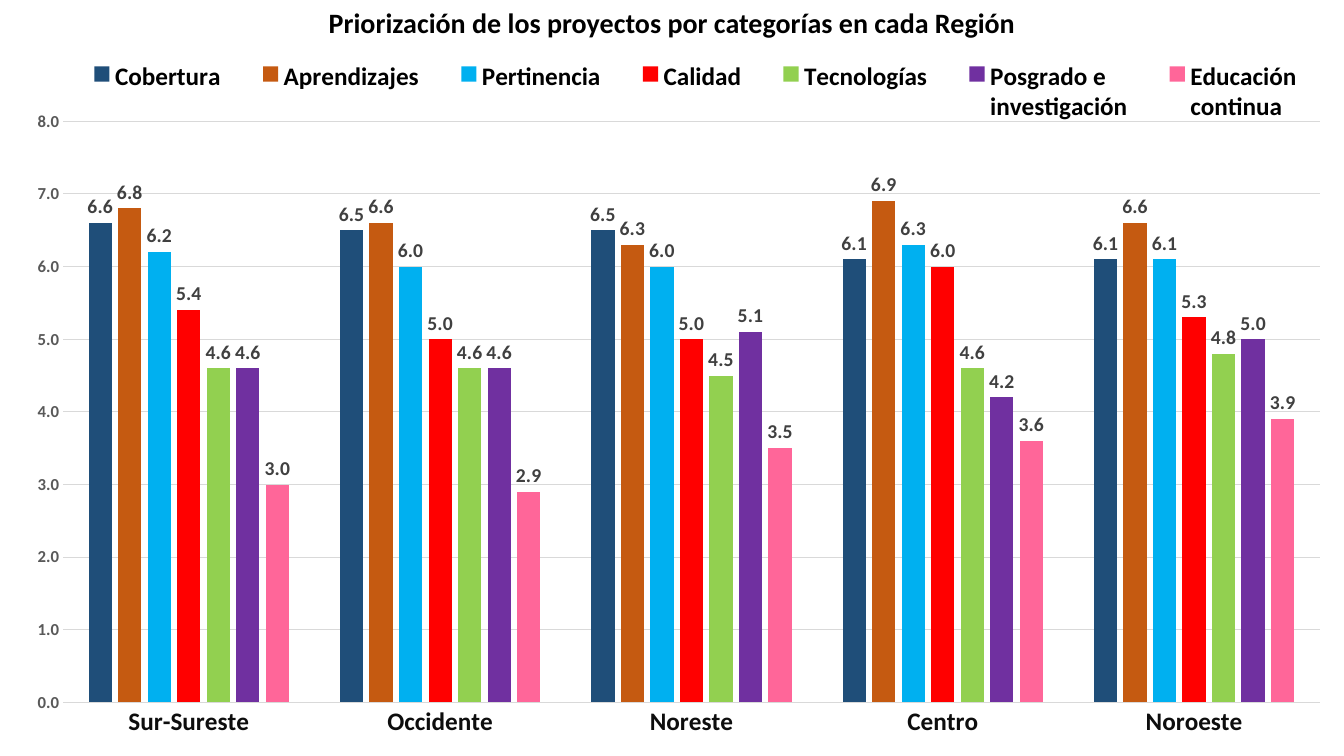
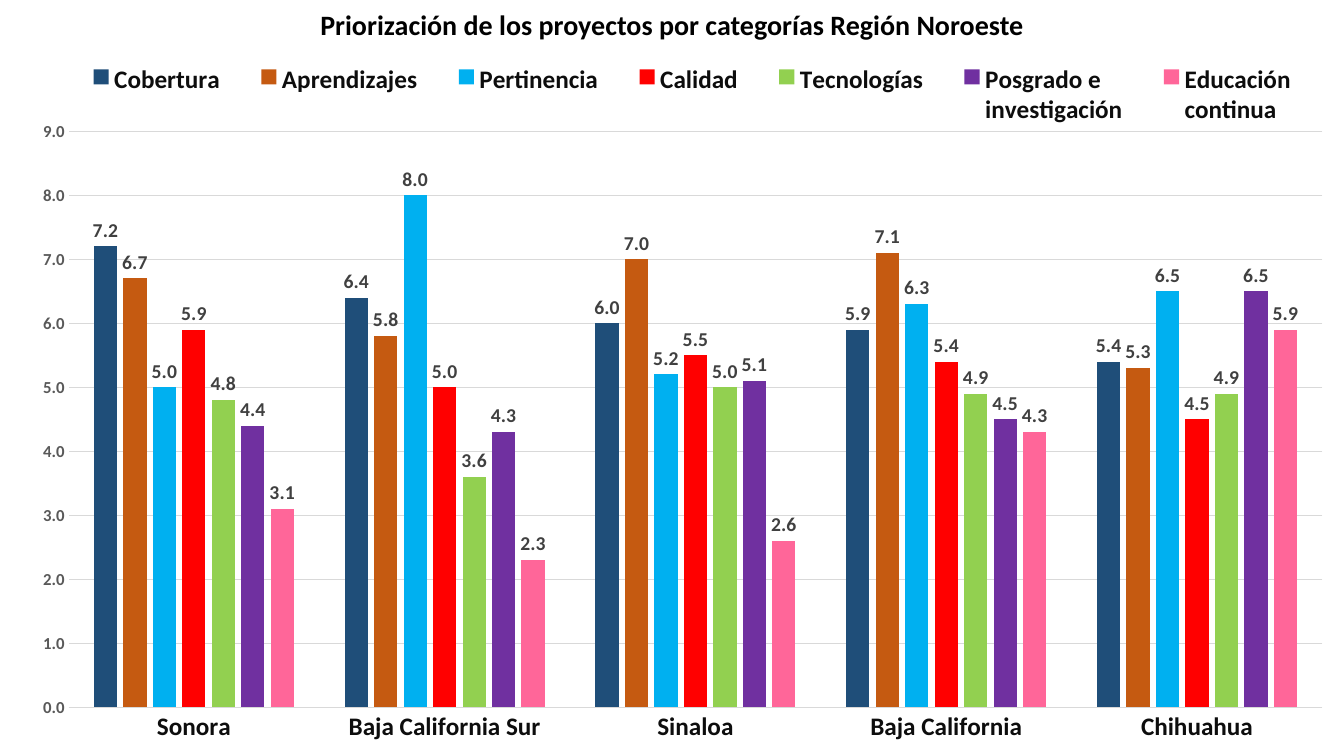
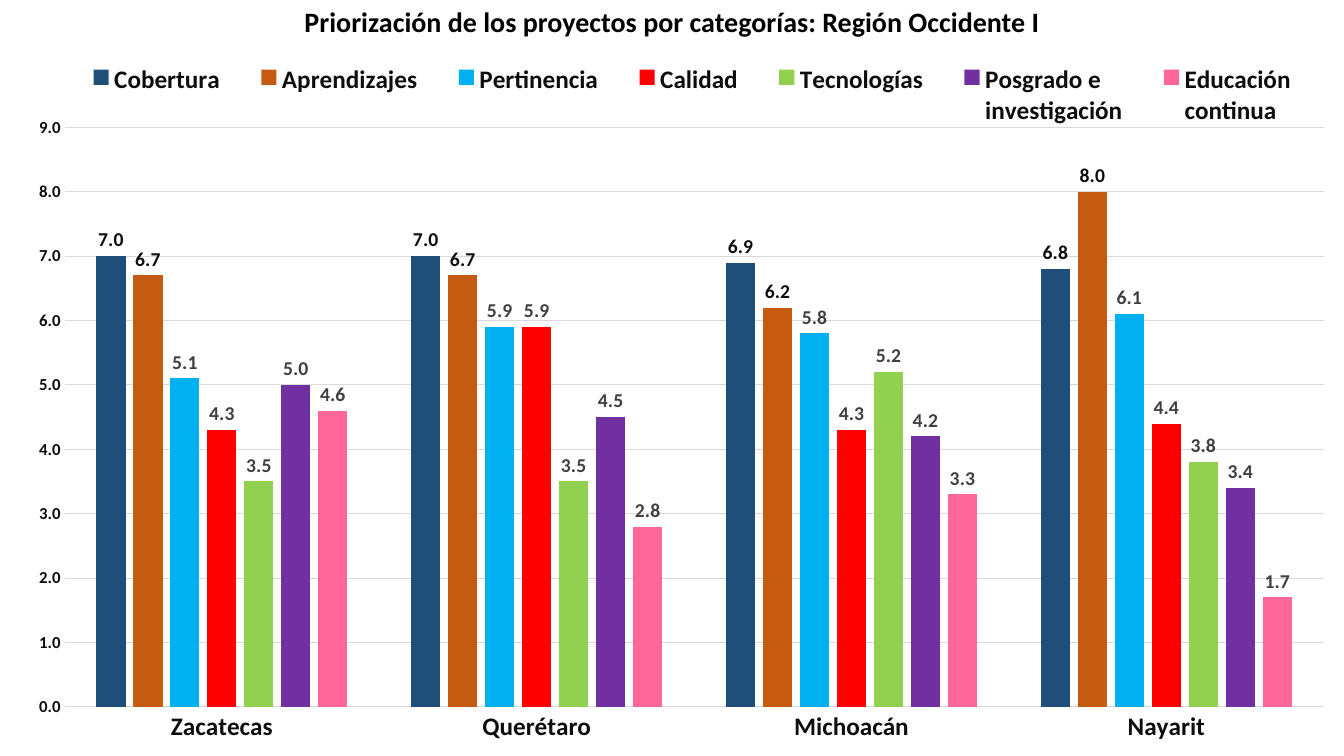
import pptx
import pptx.chart.data
import pptx.dml.color
import pptx.enum.chart
import pptx.enum.text
import pptx.oxml
import pptx.oxml.ns
import pptx.util

Pt = pptx.util.Pt
WIDTH, HEIGHT = 960, 540
BLACK, INK, DARK, GREY, RULE = "000000", "0D0D0D", "404040", "595959", "D9D9D9"
SERIES = {
    "Cobertura": "1F4E79",
    "Aprendizajes": "C55A11",
    "Pertinencia": "00B0F0",
    "Calidad": "FF0000",
    "Tecnologías": "92D050",
    "Posgrado e\ninvestigación": "7030A0",
    "Educación\ncontinua": "FF6699",
}

# Values: one row per category, one number per series
PAGES = [
    {
        "title": "Priorización de los proyectos por categorías en cada Región",
        "title_top": 0.5, "chart_top": 38, "maximum": 8,
        "plot": (0.047, 0.097, 0.935, 0.827),
        "legend": (0.045, 0.005, 0.945, 0.1),
        "legend_color": BLACK, "scale_color": GREY, "label_colors": {},
        "rows": {
            "Sur-Sureste": (6.6, 6.8, 6.2, 5.4, 4.6, 4.6, 3.0),
            "Occidente": (6.5, 6.6, 6.0, 5.0, 4.6, 4.6, 2.9),
            "Noreste": (6.5, 6.3, 6.0, 5.0, 4.5, 5.1, 3.5),
            "Centro": (6.1, 6.9, 6.3, 6.0, 4.6, 4.2, 3.6),
            "Noroeste": (6.1, 6.6, 6.1, 5.3, 4.8, 5.0, 3.9),
        },
    },
    {
        "title": "Priorización de los proyectos por categorías Región Noroeste",
        "title_top": 2, "chart_top": 37.5, "maximum": 9,
        "plot": (0.051, 0.112, 0.933, 0.819),
        "legend": (0.045, 0.01, 0.94, 0.1),
        "legend_color": INK, "scale_color": GREY, "label_colors": {},
        "rows": {
            "Sonora": (7.2, 6.7, 5.0, 5.9, 4.8, 4.4, 3.1),
            "Baja California Sur": (6.4, 5.8, 8.0, 5.0, 3.6, 4.3, 2.3),
            "Sinaloa": (6.0, 7.0, 5.2, 5.5, 5.0, 5.1, 2.6),
            "Baja California": (5.9, 7.1, 6.3, 5.4, 4.9, 4.5, 4.3),
            "Chihuahua": (5.4, 5.3, 6.5, 4.5, 4.9, 6.5, 5.9),
        },
    },
    {
        "title": "Priorización de los proyectos por categorías: Región Occidente I",
        "title_top": 0, "chart_top": 40.5, "maximum": 9,
        "plot": (0.048, 0.101, 0.937, 0.829),
        "legend": (0.045, 0.005, 0.94, 0.1),
        "legend_color": INK, "scale_color": INK,
        "label_colors": {"Cobertura": INK, "Aprendizajes": INK},
        "rows": {
            "Zacatecas": (7.0, 6.7, 5.1, 4.3, 3.5, 5.0, 4.6),
            "Querétaro": (7.0, 6.7, 5.9, 5.9, 3.5, 4.5, 2.8),
            "Michoacán": (6.9, 6.2, 5.8, 4.3, 5.2, 4.2, 3.3),
            "Nayarit": (6.8, 8.0, 6.1, 4.4, 3.8, 3.4, 1.7),
        },
    },
]


def rgb(color):
    return pptx.dml.color.RGBColor.from_string(color)


def assign(target, values):
    for name, value in values.items():
        setattr(target, name, value)


class Deck:
    """Shared style and the current page."""

    face = "Calibri"

    def __init__(self):
        self.deck = pptx.Presentation()
        assign(self.deck, {"slide_width": Pt(WIDTH), "slide_height": Pt(HEIGHT)})
        self.page = None

    def add_page(self):
        self.page = self.deck.slides.add_slide(self.deck.slide_layouts[6])

    def style(self, font, size, color, bold=True):
        assign(font, {"name": self.face, "size": Pt(size), "bold": bold})
        font.color.rgb = rgb(color)

    def rule(self, line):
        line.color.rgb = rgb(RULE)
        line.width = Pt(0.75)

    def title(self, text, top):
        box = self.page.shapes.add_textbox(0, Pt(top), Pt(WIDTH), Pt(31.5))
        assign(box.text_frame, {
            "word_wrap": True,
            "auto_size": pptx.enum.text.MSO_AUTO_SIZE.SHAPE_TO_FIT_TEXT,
        })
        para = box.text_frame.paragraphs[0]
        para.alignment = pptx.enum.text.PP_ALIGN.CENTER
        span = para.add_run()
        span.text = text
        self.style(span.font, 20, BLACK)

    def place(self, parent, index, frame, inner=False):
        """Fix the place of a chart part, as fractions of the chart."""
        for old in parent.findall(pptx.oxml.ns.qn("c:layout")):
            parent.remove(old)
        target = '<c:layoutTarget val="inner"/>' if inner else ""
        modes = "".join(f'<c:{side}Mode val="edge"/>' for side in "xy")
        sizes = "".join(f'<c:{side} val="{value}"/>' for side, value in zip("xywh", frame))
        parent.insert(index, pptx.oxml.parse_xml(
            f'<c:layout {pptx.oxml.ns.nsdecls("c")}><c:manualLayout>'
            f"{target}{modes}{sizes}</c:manualLayout></c:layout>"))

    def columns(self, content):
        # Data
        rows = content["rows"]
        data = pptx.chart.data.CategoryChartData(number_format="0.0")
        data.categories = list(rows)
        for name, values in zip(SERIES, zip(*rows.values())):
            data.add_series(name, values)
        top = content["chart_top"]
        chart = self.page.shapes.add_chart(
            pptx.enum.chart.XL_CHART_TYPE.COLUMN_CLUSTERED,
            0, Pt(top), Pt(WIDTH), Pt(HEIGHT - top), data).chart
        chart.has_title = False
        self.style(chart.font, 10, BLACK, False)

        # Columns and their labels
        plot = chart.plots[0]
        assign(plot, {"gap_width": 219, "overlap": -27, "vary_by_categories": False})
        for series in plot.series:
            series.format.fill.solid()
            series.format.fill.fore_color.rgb = rgb(SERIES[series.name])
            labels = series.data_labels
            assign(labels, {
                "show_value": True,
                "number_format": "0.0",
                "number_format_is_linked": False,
                "position": pptx.enum.chart.XL_LABEL_POSITION.OUTSIDE_END,
            })
            self.style(labels.font, 14, content["label_colors"].get(series.name, DARK))

        # Axes
        none = pptx.enum.chart.XL_TICK_MARK.NONE
        names, scale = chart.category_axis, chart.value_axis
        for axis in (names, scale):
            assign(axis, {"major_tick_mark": none, "minor_tick_mark": none})
        self.style(names.tick_labels.font, 18, INK)
        self.rule(names.format.line)
        assign(scale, {
            "minimum_scale": 0, "maximum_scale": content["maximum"],
            "major_unit": 1, "has_major_gridlines": True,
        })
        assign(scale.tick_labels, {"number_format": "0.0", "number_format_is_linked": False})
        self.style(scale.tick_labels.font, 12, content["scale_color"])
        scale.format.line.fill.background()
        self.rule(scale.major_gridlines.format.line)

        # Legend and layout
        chart.has_legend = True
        assign(chart.legend, {
            "position": pptx.enum.chart.XL_LEGEND_POSITION.BOTTOM,
            "include_in_layout": False,
        })
        self.style(chart.legend.font, 18, content["legend_color"])
        body = chart.element.find(pptx.oxml.ns.qn("c:chart"))
        self.place(body.find(pptx.oxml.ns.qn("c:plotArea")), 0, content["plot"], True)
        self.place(body.find(pptx.oxml.ns.qn("c:legend")), 1, content["legend"])


def main():
    deck = Deck()
    for content in PAGES:
        deck.add_page()
        deck.columns(content)
        deck.title(content["title"], content["title_top"])
    deck.deck.save("out.pptx")


if __name__ == "__main__":
    main()
